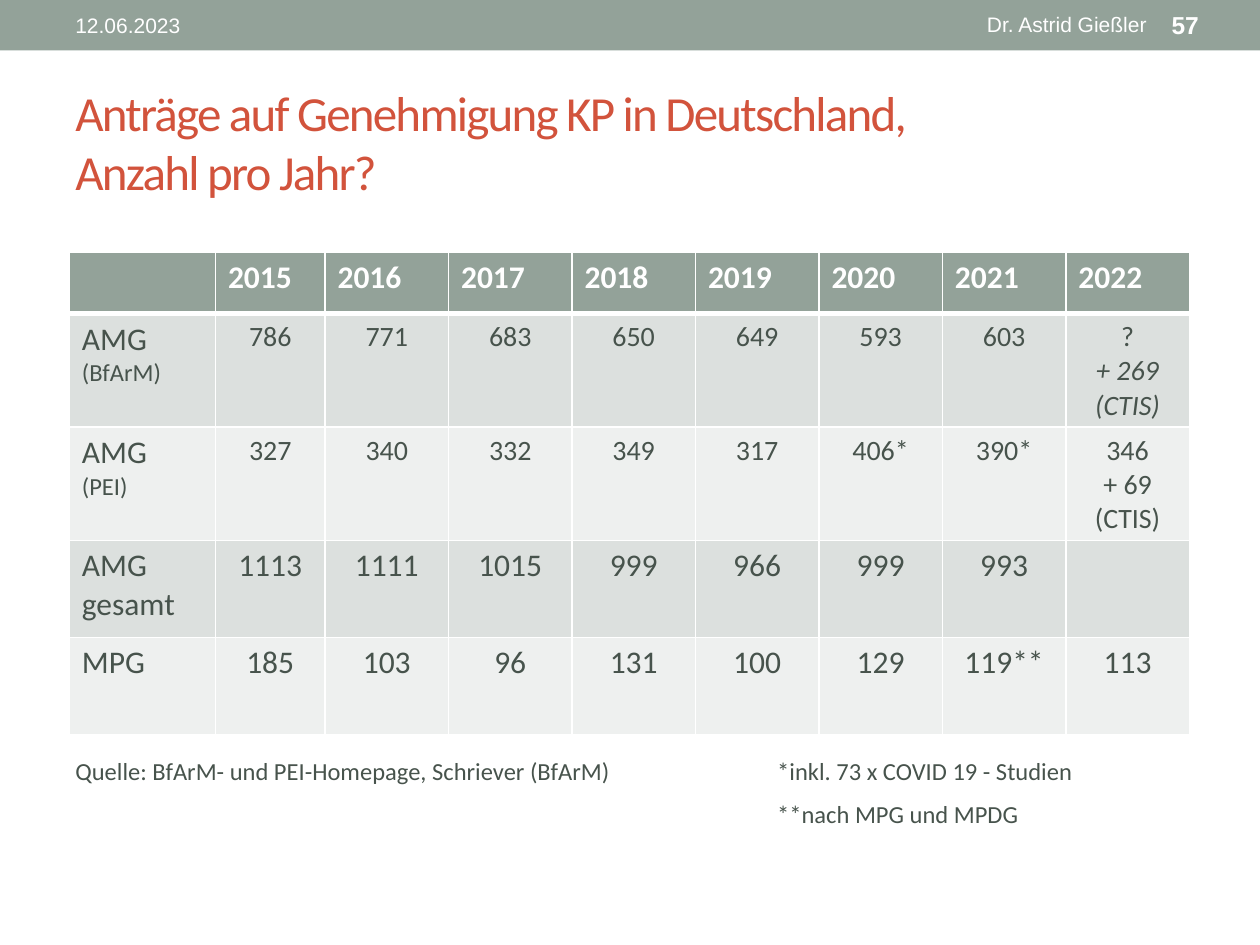
from lxml import etree
from pptx import Presentation, util as u
from pptx.dml.color import RGBColor
from pptx.enum import shapes, text
from pptx.oxml.ns import qn

COLORS = {
    "sage": "93A299",
    "white": "FFFFFF",
    "title": "D2533C",
    "ink": "47534C",
    "dark_band": "DCE0DE",
    "light_band": "EEF0EF",
}
CENTER = text.PP_ALIGN.CENTER
YEARS = [str(year) for year in range(2015, 2023)]
COLUMN_WIDTHS = [1.16, 0.87] + [0.98] * 7
ROW_HEIGHTS = [0.49] + [0.77] * 4
BODY_ROWS = [
    (["AMG", "(BfArM)"], 16, ["786", "771", "683", "650", "649", "593", "603", "?\n+ 269 (CTIS)"]),
    (["AMG", "(PEI)"], 16, ["327", "340", "332", "349", "317", "406*", "390*", "346\n+ 69 (CTIS)"]),
    (["AMG\ngesamt"], 18, ["1113", "1111", "1015", "999", "966", "999", "993", ""]),
    (["MPG"], 18, ["185", "103", "96", "131", "100", "129", "119**", "113"]),
]
FOOTNOTES = [
    "Quelle: BfArM- und PEI-Homepage, Schriever (BfArM)\t*inkl. 73 x COVID 19 - Studien",
    "\t**nach MPG und MPDG",
]


def color(name):
    """Return the named colour."""
    return RGBColor.from_string(COLORS[name])


def add_span(para, words, size, ink, font="Calibri", bold=False, italic=False):
    """Append a formatted run to a paragraph."""
    span = para.add_run()
    span.text = words
    span.font.size = u.Pt(size)
    span.font.name = font
    span.font.bold = bold
    span.font.italic = italic
    span.font.color.rgb = color(ink)
    return span


def next_para(frame, index):
    """Return the first paragraph of a frame or append a new one."""
    return frame.add_paragraph() if index else frame.paragraphs[0]


def add_box(page, left, top, width, height, anchor=text.MSO_ANCHOR.MIDDLE):
    """Add a wrapping text box and return its text frame."""
    box = page.shapes.add_textbox(*map(u.Inches, (left, top, width, height)))
    frame = box.text_frame
    frame.word_wrap = True
    frame.vertical_anchor = anchor
    return frame


def add_header(page):
    """Draw the top band with date, author and page number."""
    band = page.shapes.add_shape(
        shapes.MSO_SHAPE.RECTANGLE, 0, 0, u.Inches(10), u.Inches(0.4))
    band.shadow.inherit = False
    band.fill.solid()
    band.fill.fore_color.rgb = color("sage")
    band.line.fill.background()
    date = add_box(page, 0.5, 0.02, 3.17, 0.36)
    add_span(date.paragraphs[0], "12.06.2023", 12, "white", "Arial")
    author = add_box(page, 4.14, 0.01, 5.06, 0.36)
    author.paragraphs[0].alignment = text.PP_ALIGN.RIGHT
    add_span(author.paragraphs[0], "Dr. Astrid Gießler", 12, "white", "Arial")
    number = add_box(page, 9.2, 0.02, 0.59, 0.36)
    add_span(number.paragraphs[0], "57", 14, "white", "Arial", bold=True)


def add_title(page):
    """Write the two-line title with tightened letter spacing."""
    para = add_box(page, 0.5, 0.58, 9, 1.08).paragraphs[0]
    lines = ["Anträge auf Genehmigung KP in Deutschland,", "Anzahl pro Jahr?"]
    for index, line in enumerate(lines):
        if index:
            para.add_line_break()
        span = add_span(para, line, 28, "title")
        span.font._element.set("spc", "-100")


def style_cell(cell, fill, top=1, bottom=1):
    """Give a cell white borders and a solid fill."""
    properties = cell._tc.get_or_add_tcPr()
    for side, points in (("L", 1), ("R", 1), ("T", top), ("B", bottom)):
        line = etree.SubElement(properties, qn(f"a:ln{side}"), w=str(u.Pt(points)))
        solid = etree.SubElement(line, qn("a:solidFill"))
        etree.SubElement(solid, qn("a:srgbClr"), val=COLORS["white"])
    cell.fill.solid()
    cell.fill.fore_color.rgb = color(fill)


def write_label(cell, parts):
    """Write a row label, with any second part smaller on its own line."""
    for index, line in enumerate(parts[0].split("\n")):
        para = next_para(cell.text_frame, index)
        add_span(para, line, 18, "ink")
    for note in parts[1:]:
        para.add_line_break()
        add_span(para, note, 14, "ink")


def write_value(cell, value, size, italic_note):
    """Write a centred value, with an optional note below it."""
    for index, line in enumerate(value.split("\n")):
        para = next_para(cell.text_frame, index)
        para.alignment = CENTER
        if line:
            add_span(para, line, size, "ink", italic=italic_note and index > 0)


def add_counts_table(page):
    """Build the table of applications per year."""
    frame = page.shapes.add_table(
        len(ROW_HEIGHTS), len(COLUMN_WIDTHS), u.Inches(0.55), u.Inches(2),
        u.Inches(sum(COLUMN_WIDTHS)), u.Inches(sum(ROW_HEIGHTS)))
    table = frame.table
    for column, width in zip(table.columns, COLUMN_WIDTHS):
        column.width = u.Inches(width)
    for row, height in zip(table.rows, ROW_HEIGHTS):
        row.height = u.Inches(height)
    for column, year in enumerate([""] + YEARS):
        cell = table.cell(0, column)
        style_cell(cell, "sage", bottom=3)
        if year:
            add_span(cell.text_frame.paragraphs[0], year, 18, "white", bold=True)
    for row, (label, size, values) in enumerate(BODY_ROWS, 1):
        for cell in table.rows[row].cells:
            style_cell(cell, "dark_band" if row % 2 else "light_band", top=3 if row == 1 else 1)
        write_label(table.cell(row, 0), label)
        for column, value in enumerate(values, 1):
            write_value(table.cell(row, column), value, size, row == 1)


def add_footnotes(page):
    """Write the source and notes, aligned at a tab stop."""
    frame = add_box(page, 0.5, 5.93, 8.8, 1.36, text.MSO_ANCHOR.TOP)
    for index, note in enumerate(FOOTNOTES):
        para = next_para(frame, index)
        para.line_spacing = 1.1
        para.space_before = u.Pt(6)
        stops = etree.SubElement(para._p.get_or_add_pPr(), qn("a:tabLst"))
        etree.SubElement(stops, qn("a:tab"), pos=str(u.Inches(5.57)), algn="l")
        add_span(para, note, 14, "ink")


def main():
    """Build and save the slide."""
    deck = Presentation()
    deck.slide_width, deck.slide_height = u.Inches(10), u.Inches(7.5)
    page = deck.slides.add_slide(deck.slide_layouts[6])
    add_header(page)
    add_title(page)
    add_counts_table(page)
    add_footnotes(page)
    deck.save("out.pptx")


if __name__ == "__main__":
    main()
